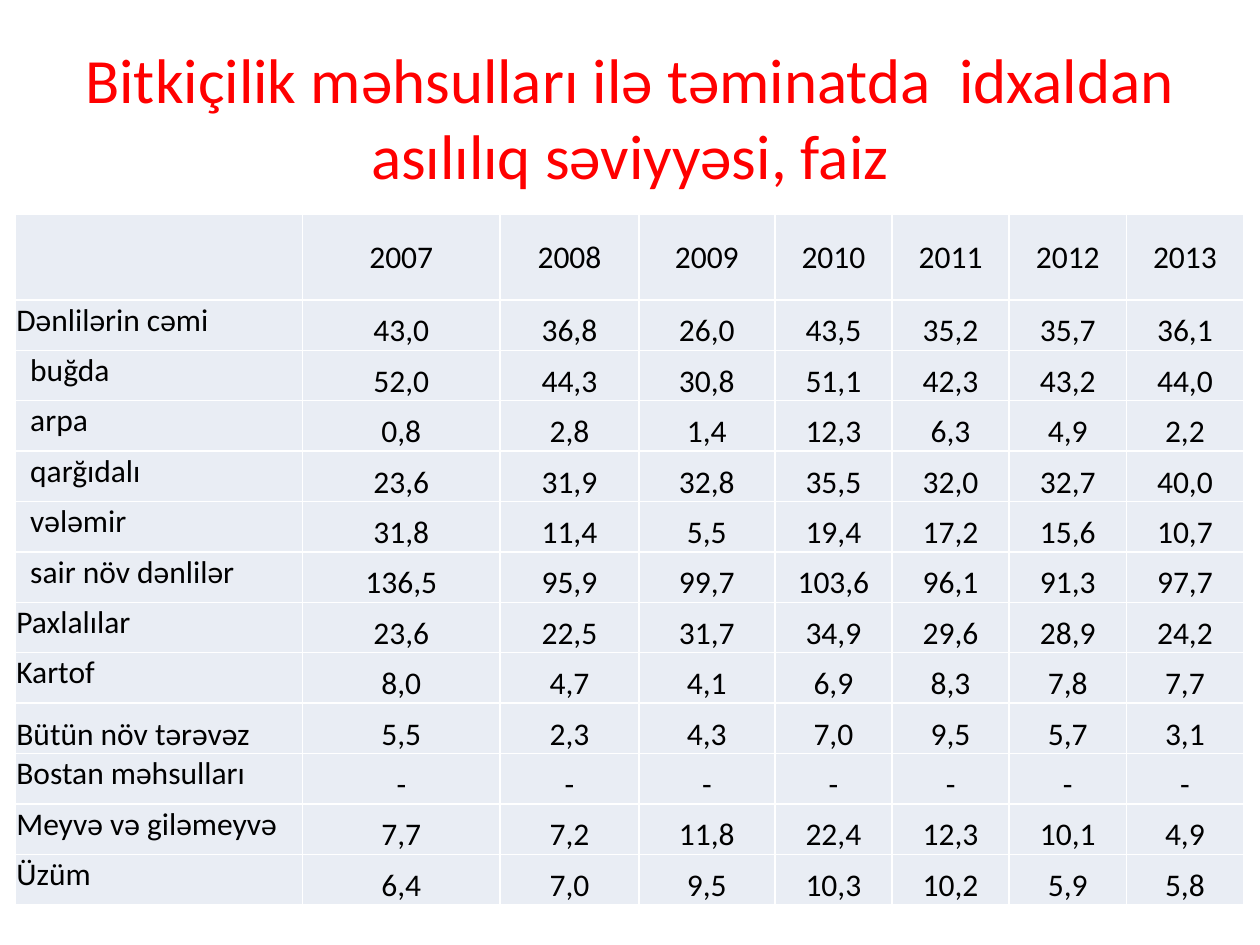
"""Build a slide with a table of import dependence for crop products, 2007-2013."""
import pptx
import pptx.dml.color
import pptx.enum.text
import pptx.oxml
import pptx.oxml.ns
import pptx.util

RED = pptx.dml.color.RGBColor(0xFF, 0x00, 0x00)
BLACK = pptx.dml.color.RGBColor(0x00, 0x00, 0x00)
WHITE = pptx.dml.color.RGBColor(0xFF, 0xFF, 0xFF)
PALE_BLUE = pptx.dml.color.RGBColor(0xE9, 0xED, 0xF4)
FONT = "Calibri"
ALIGN = pptx.enum.text.PP_ALIGN
ANCHOR = pptx.enum.text.MSO_ANCHOR
Inches = pptx.util.Inches

COLUMN_WIDTHS = [2.28, 1.57, 1.1, 1.08] + [0.93] * 4
HEADER_HEIGHT, ROW_HEIGHT = 0.68, 0.4
YEARS = [str(year) for year in range(2007, 2014)]
GRAINS = ["buğda", "arpa", "qarğıdalı", "vələmir", "sair növ dənlilər"]
VEGETABLES = "Bütün növ tərəvəz"
ROWS = [
    ["", *YEARS],
    ["Dənlilərin cəmi", "43,0", "36,8", "26,0", "43,5", "35,2", "35,7", "36,1"],
    [GRAINS[0], "52,0", "44,3", "30,8", "51,1", "42,3", "43,2", "44,0"],
    [GRAINS[1], "0,8", "2,8", "1,4", "12,3", "6,3", "4,9", "2,2"],
    [GRAINS[2], "23,6", "31,9", "32,8", "35,5", "32,0", "32,7", "40,0"],
    [GRAINS[3], "31,8", "11,4", "5,5", "19,4", "17,2", "15,6", "10,7"],
    [GRAINS[4], "136,5", "95,9", "99,7", "103,6", "96,1", "91,3", "97,7"],
    ["Paxlalılar", "23,6", "22,5", "31,7", "34,9", "29,6", "28,9", "24,2"],
    ["Kartof", "8,0", "4,7", "4,1", "6,9", "8,3", "7,8", "7,7"],
    [VEGETABLES, "5,5", "2,3", "4,3", "7,0", "9,5", "5,7", "3,1"],
    ["Bostan məhsulları"] + ["-"] * len(YEARS),
    ["Meyvə və giləmeyvə", "7,7", "7,2", "11,8", "22,4", "12,3", "10,1", "4,9"],
    ["Üzüm", "6,4", "7,0", "9,5", "10,3", "10,2", "5,9", "5,8"],
]


def add_span(para, text, size, color):
    """Add one formatted run to a paragraph."""
    span = para.add_run()
    span.text = text
    span.font.name = FONT
    span.font.size = pptx.util.Pt(size)
    span.font.bold = False
    span.font.color.rgb = color


def add_borders(cell, color, width):
    """Draw a solid line on all four sides of a cell."""
    properties = cell._tc.get_or_add_tcPr()
    for side in ("lnL", "lnR", "lnT", "lnB"):
        properties.append(pptx.oxml.parse_xml(
            f'<a:{side} {pptx.oxml.ns.nsdecls("a")} w="{pptx.util.Pt(width)}">'
            f'<a:solidFill><a:srgbClr val="{color}"/></a:solidFill></a:{side}>'))


deck = pptx.Presentation()
deck.slide_width, deck.slide_height = Inches(10), Inches(7.5)
page = deck.slides.add_slide(deck.slide_layouts[5])

title = page.shapes.title
title.left, title.top = int(deck.slide_width * 0.05), int(deck.slide_height * 0.04)
title.width, title.height = int(deck.slide_width * 0.9), Inches(1.25)
title.text_frame.word_wrap = True
title.text_frame.vertical_anchor = ANCHOR.MIDDLE
heading = title.text_frame.paragraphs[0]
heading.alignment = ALIGN.CENTER
add_span(heading, "Bitkiçilik məhsulları ilə təminatda  idxaldan asılılıq səviyyəsi, faiz", 36, RED)

table_height = HEADER_HEIGHT + ROW_HEIGHT * (len(ROWS) - 1)
table = page.shapes.add_table(
    len(ROWS), len(COLUMN_WIDTHS), Inches(0.12), Inches(1.7),
    Inches(sum(COLUMN_WIDTHS)), Inches(table_height)).table
for column, width in zip(table.columns, COLUMN_WIDTHS):
    column.width = Inches(width)

for row_index, values in enumerate(ROWS):
    table.rows[row_index].height = Inches(ROW_HEIGHT if row_index else HEADER_HEIGHT)
    for column_index, value in enumerate(values):
        cell = table.cell(row_index, column_index)
        add_borders(cell, WHITE, 1)
        cell.fill.solid()
        cell.fill.fore_color.rgb = PALE_BLUE
        if not value:
            continue
        cell.margin_left = Inches(0.12 if value in GRAINS else 0.01)
        cell.margin_right = cell.margin_top = Inches(0.01)
        cell.margin_bottom = 0
        if row_index == 0:
            cell.vertical_anchor = ANCHOR.MIDDLE
        elif column_index or value == VEGETABLES:
            cell.vertical_anchor = ANCHOR.BOTTOM
        else:
            cell.vertical_anchor = ANCHOR.TOP
        para = cell.text_frame.paragraphs[0]
        para.alignment = ALIGN.CENTER if column_index else ALIGN.LEFT
        add_span(para, value, 18, BLACK)

deck.save("out.pptx")
